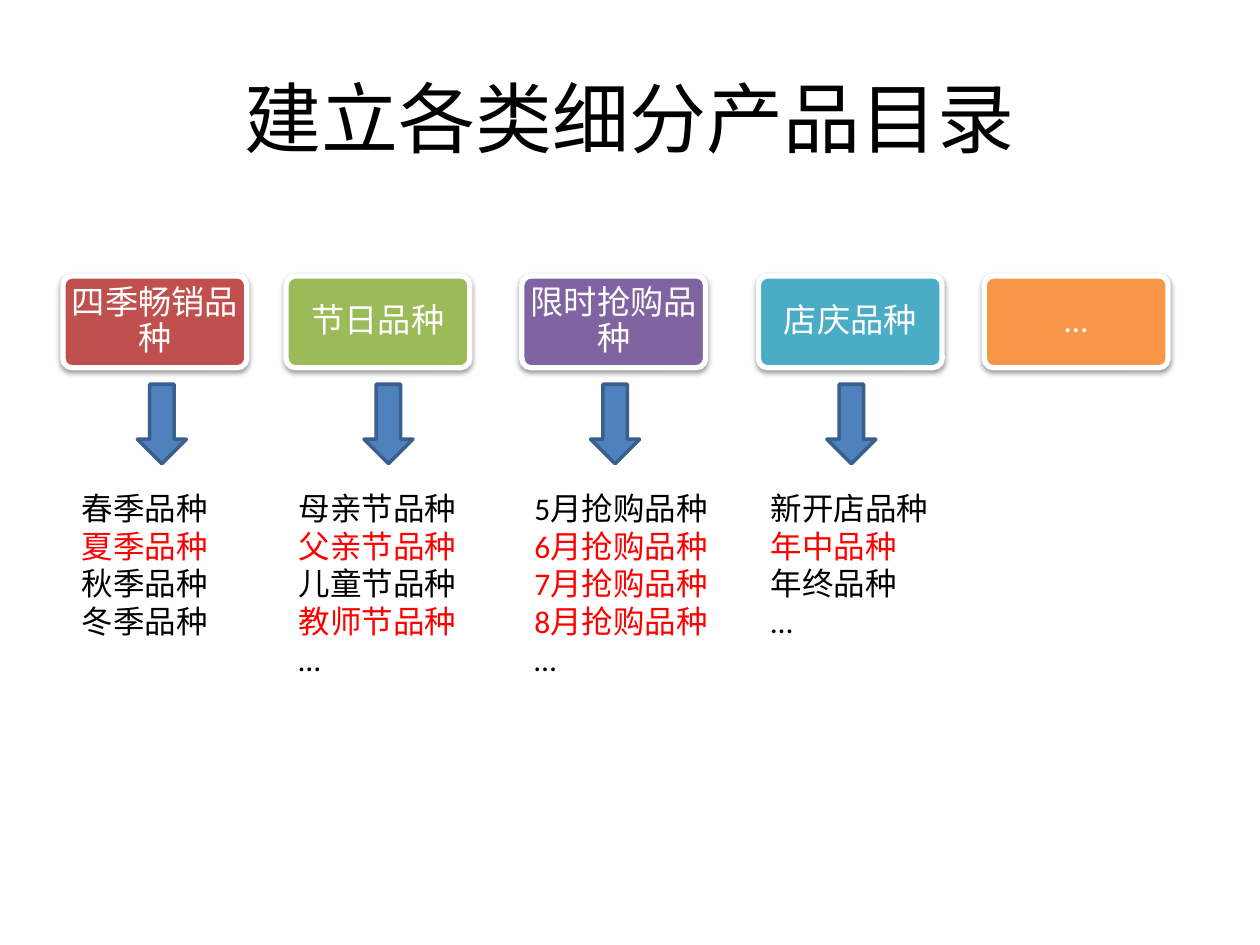
"""Build the slide of product catalogue categories and their items."""
from dataclasses import dataclass

from lxml.etree import SubElement
from pptx import Presentation
from pptx.dml.color import RGBColor
from pptx.enum.shapes import MSO_SHAPE
from pptx.enum.text import MSO_ANCHOR, PP_ALIGN
from pptx.oxml.ns import qn
from pptx.util import Pt

COLORS = {
    "black": "000000", "white": "FFFFFF", "highlight": "FF0000",
    "red": "C0504D", "green": "9BBB59", "purple": "8064A2",
    "aqua": "4BACC6", "orange": "F79646",
    "arrow": "4F81BD", "arrow_line": "3A5F8C",
}
FONT = "Calibri"
BOX_TOP, BOX_W, BOX_H = 157.7, 105, 52.5
ARROW_TOP, ARROW_W, ARROW_H = 219.6, 28, 45.4
LIST_TOP, LIST_PAD, LINE_H = 275.8, 7.2, 21.6


@dataclass
class Category:
    name: str
    color: str
    left: float
    arrow_left: float = 0
    list_left: float = 0
    list_width: float = 0
    items: tuple[str, ...] = ()
    highlighted: tuple[int, ...] = ()


CATEGORIES = [
    Category("四季畅销品种", "red", 36, 78.5, 39.6, 106.6,
             ("春季品种", "夏季品种", "秋季品种", "冬季品种"), (1,)),
    Category("节日品种", "green", 163.5, 208, 163.5, 106.6,
             ("母亲节品种", "父亲节品种", "儿童节品种", "教师节品种", "…"), (1, 3)),
    Category("限时抢购品种", "purple", 298.2, 337.5, 298.2, 123.8,
             ("5月抢购品种", "6月抢购品种", "7月抢购品种", "8月抢购品种", "…"), (1, 2, 3)),
    Category("店庆品种", "aqua", 433.4, 472.5, 433.4, 123.8,
             ("新开店品种", "年中品种", "年终品种", "…"), (1,)),
    Category("…", "orange", 562.5),
]


def rgb(name: str) -> RGBColor:
    return RGBColor.from_string(COLORS[name])


def style_text(p, size: float, color: str) -> None:
    p.font.name = FONT
    p.font.size = Pt(size)
    p.font.color.rgb = rgb(color)


def style_shape(sp, fill: str, line: str, width: float) -> None:
    sp.shadow.inherit = False
    sp.fill.solid()
    sp.fill.fore_color.rgb = rgb(fill)
    sp.line.color.rgb = rgb(line)
    sp.line.width = Pt(width)


def add_drop_shadow(sp) -> None:
    effects = sp._element.spPr.find(qn("a:effectLst"))
    shadow = SubElement(effects, qn("a:outerShdw"), blurRad=str(Pt(3.1)),
                        dist=str(Pt(1.6)), dir="5400000", rotWithShape="0")
    color = SubElement(shadow, qn("a:srgbClr"), val=COLORS["black"])
    SubElement(color, qn("a:alpha"), val="38000")


def add_title(s, text: str) -> None:
    sp = s.shapes.title
    sp.left, sp.top, sp.width, sp.height = Pt(36), Pt(21.6), Pt(648), Pt(90)
    tf = sp.text_frame
    tf.text = text
    tf.vertical_anchor = MSO_ANCHOR.MIDDLE
    p = tf.paragraphs[0]
    p.alignment = PP_ALIGN.CENTER
    style_text(p, 44, "black")


def add_box(s, cat: Category) -> None:
    sp = s.shapes.add_shape(MSO_SHAPE.ROUNDED_RECTANGLE, Pt(cat.left),
                            Pt(BOX_TOP), Pt(BOX_W), Pt(BOX_H))
    sp.adjustments[0] = 0.1
    style_shape(sp, cat.color, "white", 3)
    add_drop_shadow(sp)
    tf = sp.text_frame
    tf.word_wrap = True
    tf.vertical_anchor = MSO_ANCHOR.MIDDLE
    tf.margin_left = tf.margin_right = Pt(2.9)
    tf.margin_top = tf.margin_bottom = Pt(2)
    p = tf.paragraphs[0]
    p.text = cat.name
    p.alignment = PP_ALIGN.CENTER
    p.line_spacing = 0.9
    style_text(p, 19, "white")


def add_arrow(s, cat: Category) -> None:
    sp = s.shapes.add_shape(MSO_SHAPE.DOWN_ARROW, Pt(cat.arrow_left),
                            Pt(ARROW_TOP), Pt(ARROW_W), Pt(ARROW_H))
    style_shape(sp, "arrow", "arrow_line", 2)


def add_items(s, cat: Category) -> None:
    height = len(cat.items) * LINE_H + LIST_PAD
    sp = s.shapes.add_textbox(Pt(cat.list_left), Pt(LIST_TOP),
                              Pt(cat.list_width), Pt(height))
    tf = sp.text_frame
    tf.word_wrap = True
    tf.text = "\n".join(cat.items)
    for i, p in enumerate(tf.paragraphs):
        style_text(p, 18, "highlight" if i in cat.highlighted else "black")


def main() -> None:
    prs = Presentation()
    prs.slide_width, prs.slide_height = Pt(720), Pt(540)
    s = prs.slides.add_slide(prs.slide_layouts[5])
    add_title(s, "建立各类细分产品目录")
    for cat in CATEGORIES:
        add_box(s, cat)
        if cat.items:
            add_arrow(s, cat)
            add_items(s, cat)
    prs.save("out.pptx")


if __name__ == "__main__":
    main()
